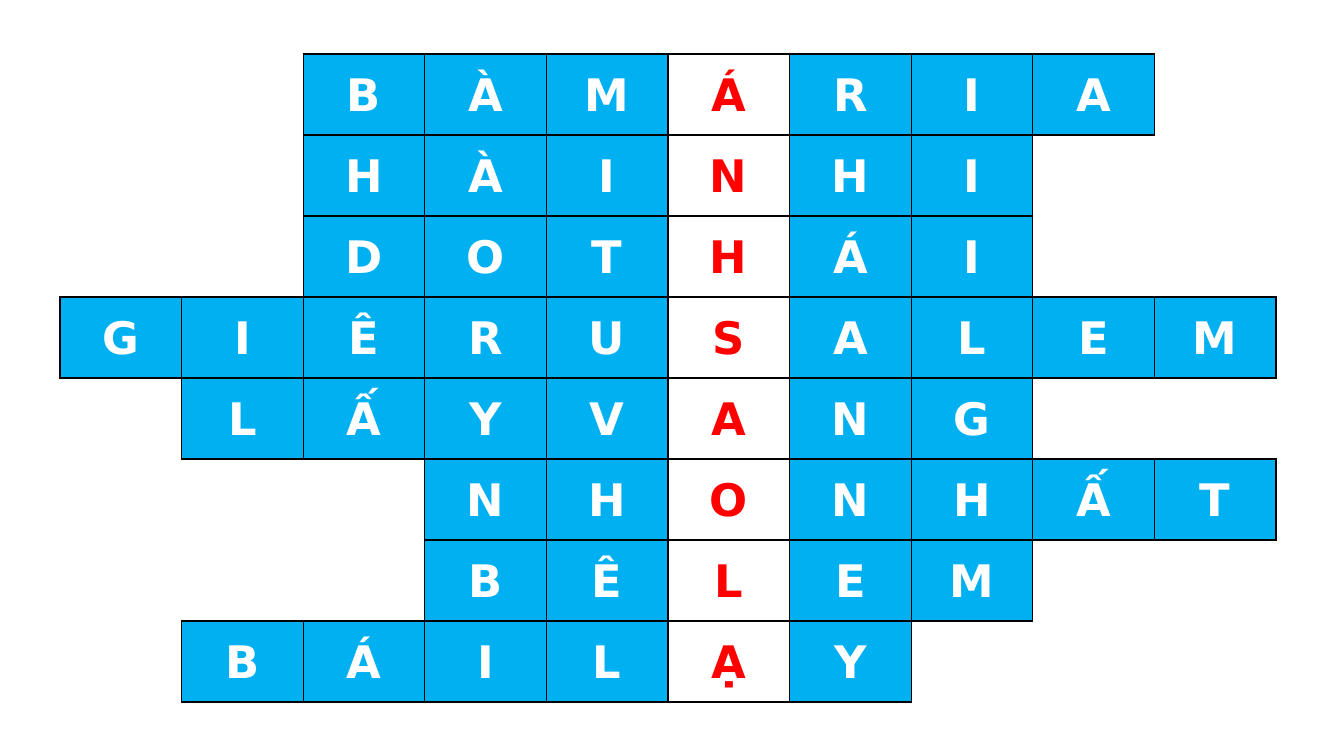
"""Build a crossword slide whose key column spells the hidden phrase."""
import pptx
import pptx.dml.color
import pptx.enum.text
import pptx.oxml.ns
import pptx.util
import lxml.etree

ANSWERS = [
    (2, "BÀMÁRIA"),
    (2, "HÀINHI"),
    (2, "DOTHÁI"),
    (0, "GIÊRUSALEM"),
    (1, "LẤYVANG"),
    (3, "NHONHẤT"),
    (3, "BÊLEM"),
    (1, "BÁILẠY"),
]
KEY_COLUMN = 5
COLUMNS = 10
SLIDE_WIDTH, SLIDE_HEIGHT = 1344, 756
LEFT, TOP, WIDTH, ROW_HEIGHT = 60, 54, 1216, 81
SIDE_PADDING = 7
FONT = "DejaVu Sans"
BLUE, WHITE, RED, BLACK = "00B0F0", "FFFFFF", "FF0000", "000000"
SIDES = {"lnL": (0, -1), "lnR": (0, 1), "lnT": (-1, 0), "lnB": (1, 0)}


def px(length):
    return pptx.util.Emu(round(length * 914400 / 100.8))


def colour(value):
    return pptx.dml.color.RGBColor.from_string(value)


def add_border(cell, side, visible):
    qn = pptx.oxml.ns.qn
    properties = cell._tc.get_or_add_tcPr()
    border = lxml.etree.SubElement(properties, qn("a:" + side), w=str(pptx.util.Pt(1)))
    if visible:
        paint = lxml.etree.SubElement(border, qn("a:solidFill"))
        lxml.etree.SubElement(paint, qn("a:srgbClr"), val=BLACK)
    else:
        lxml.etree.SubElement(border, qn("a:noFill"))


def write_letter(cell, letter, ink):
    cell.vertical_anchor = pptx.enum.text.MSO_ANCHOR.MIDDLE
    cell.margin_left = cell.margin_right = px(SIDE_PADDING)
    cell.margin_top = cell.margin_bottom = 0
    paragraph = cell.text_frame.paragraphs[0]
    paragraph.alignment = pptx.enum.text.PP_ALIGN.CENTER
    paragraph.line_spacing = 1.07
    paragraph.space_after = pptx.util.Pt(8)
    run = paragraph.add_run()
    run.text = letter
    run.font.name = FONT
    run.font.size = pptx.util.Pt(32)
    run.font.bold = True
    run.font.color.rgb = colour(ink)


def main():
    deck = pptx.Presentation()
    deck.slide_width, deck.slide_height = px(SLIDE_WIDTH), px(SLIDE_HEIGHT)
    slide = deck.slides.add_slide(deck.slide_layouts[6])
    crossword = slide.shapes.add_table(
        len(ANSWERS), COLUMNS, px(LEFT), px(TOP), px(WIDTH), px(ROW_HEIGHT * len(ANSWERS))
    ).table
    crossword.first_row = crossword.horz_banding = False

    letters = {
        (row, start + offset): letter
        for row, (start, answer) in enumerate(ANSWERS)
        for offset, letter in enumerate(answer)
    }
    for row in range(len(ANSWERS)):
        for column in range(COLUMNS):
            cell = crossword.cell(row, column)
            letter = letters.get((row, column))
            for side, (down, across) in SIDES.items():
                neighbour = (row + down, column + across)
                add_border(cell, side, letter is not None or neighbour in letters)
            if letter is None:
                cell.fill.background()
                continue
            is_key = column == KEY_COLUMN
            cell.fill.solid()
            cell.fill.fore_color.rgb = colour(WHITE if is_key else BLUE)
            write_letter(cell, letter, RED if is_key else WHITE)

    deck.save("out.pptx")


if __name__ == "__main__":
    main()
